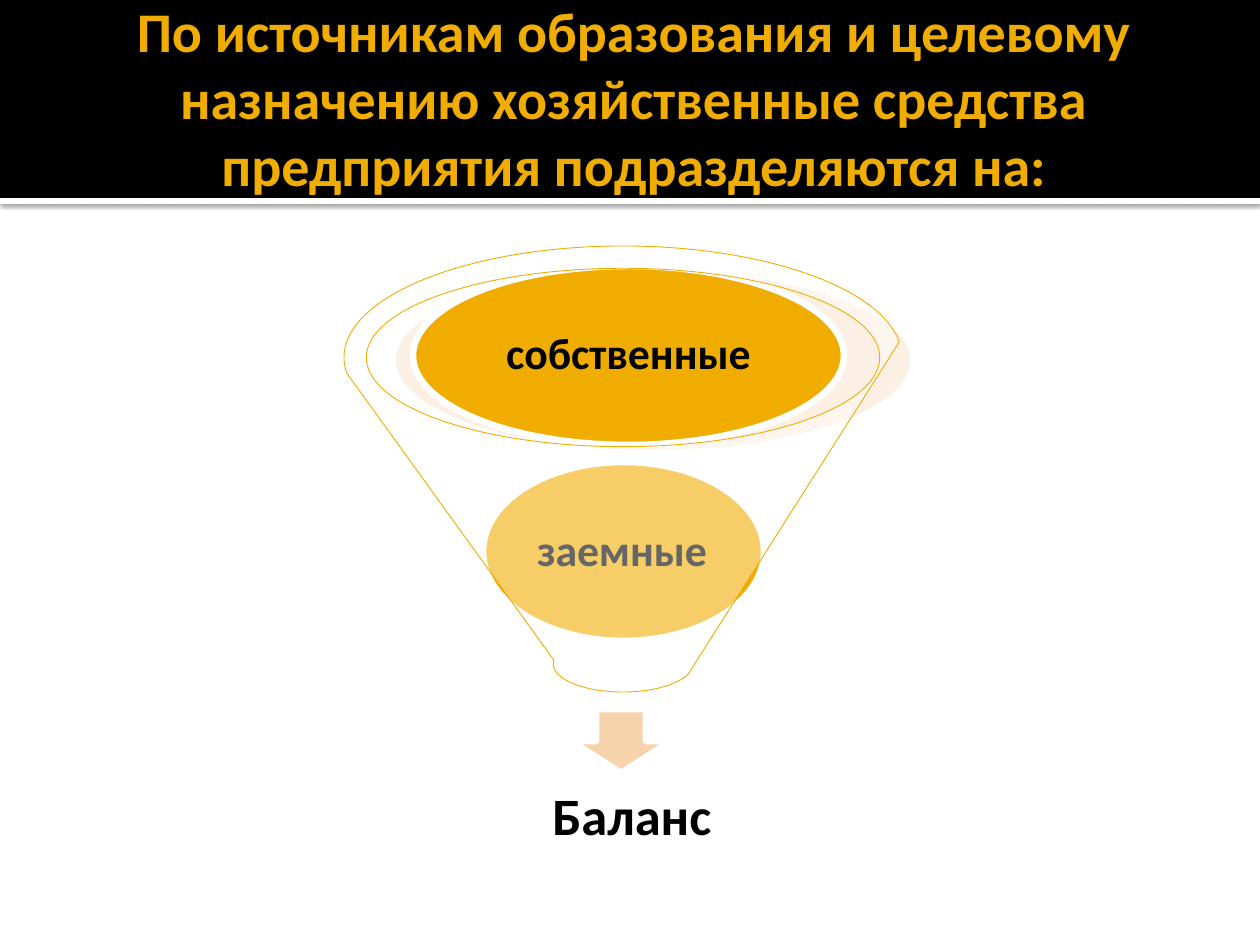
import dataclasses

import pptx
import pptx.dml.color
import pptx.enum.shapes
import pptx.enum.text
import pptx.oxml
import pptx.oxml.ns
import pptx.util

SHAPE = pptx.enum.shapes.MSO_SHAPE
PX_PER_INCH = 126


@dataclasses.dataclass(frozen=True)
class Theme:
    font: str = "Calibri"
    gold: str = "F0AD00"
    black: str = "000000"
    white: str = "FFFFFF"
    rim: str = "F8DBBD"
    arrow: str = "F6D3AB"
    title_size: int = 32
    result_size: int = 30
    ball_size: int = 25
    outline: float = 3.78
    hairline: float = 0.5


def px(length):
    return pptx.util.Emu(round(length * 914400 / PX_PER_INCH))


def rgb(color):
    return pptx.dml.color.RGBColor.from_string(color)


def apply(target, values):
    for name, value in values.items():
        setattr(target, name, value)


def place(box, left, top, width, height):
    apply(box, {"left": px(left), "top": px(top), "width": px(width), "height": px(height)})


def effect(tag, **attributes):
    element = pptx.oxml.parse_xml(f"<a:{tag} {pptx.oxml.ns.nsdecls('a')}/>")
    for name, value in attributes.items():
        element.set(name, str(value))
    return element


class SlideBuilder:
    def __init__(self, page, theme):
        self.page = page
        self.theme = theme

    def shape(self, kind, area, fill, line=None, line_width=0, opacity=100):
        box = self.page.shapes.add_shape(kind, *map(px, area))
        box.shadow.inherit = False
        box.fill.solid()
        box.fill.fore_color.rgb = rgb(fill)
        if opacity < 100:
            color = box.element.find(".//" + pptx.oxml.ns.qn("a:srgbClr"))
            color.append(effect("alpha", val=opacity * 1000))
        if line:
            box.line.color.rgb = rgb(line)
            box.line.width = pptx.util.Pt(line_width)
        else:
            box.line.fill.background()
        return box

    def shadow(self, box, color, opacity, blur, distance):
        outer = effect("outerShdw", blurRad=pptx.util.Pt(blur), dist=pptx.util.Pt(distance),
                       dir=90 * 60000, algn="t", rotWithShape=0)
        shade = effect("srgbClr", val=color)
        shade.append(effect("alpha", val=opacity * 1000))
        outer.append(shade)
        box.element.find(".//" + pptx.oxml.ns.qn("a:effectLst")).append(outer)

    def set_words(self, box, words, size, color, insets, spacing=1.0):
        frame = box.text_frame
        sides = ("margin_left", "margin_top", "margin_right", "margin_bottom")
        apply(frame, dict(zip(sides, map(px, insets))))
        apply(frame, {
            "word_wrap": True,
            "auto_size": pptx.enum.text.MSO_AUTO_SIZE.NONE,
            "vertical_anchor": pptx.enum.text.MSO_ANCHOR.MIDDLE,
        })
        para = frame.paragraphs[0]
        apply(para, {"alignment": pptx.enum.text.PP_ALIGN.CENTER, "line_spacing": spacing})
        span = para.add_run()
        span.text = words
        apply(span.font, {"name": self.theme.font, "size": pptx.util.Pt(size), "bold": True})
        span.font.color.rgb = rgb(color)

    def title(self, area, words):
        box = self.page.shapes.title
        place(box, *area)
        box.element.getparent().append(box.element)
        self.set_words(box, words, self.theme.title_size, self.theme.gold, (13, 6, 6, 6))

    def label(self, area, words, size, inset):
        box = self.page.shapes.add_textbox(*map(px, area))
        self.set_words(box, words, size, self.theme.black, (inset,) * 4, 0.9)

    def ball(self, area, label_area, words):
        theme = self.theme
        self.shape(SHAPE.OVAL, area, theme.gold, theme.white, theme.outline)
        self.label(label_area, words, theme.ball_size, 4)


def main():
    theme = Theme()
    deck = pptx.Presentation()
    apply(deck, {"slide_width": px(1260), "slide_height": px(945)})
    page = deck.slides.add_slide(deck.slide_layouts[5])
    builder = SlideBuilder(page, theme)

    stripe = builder.shape(SHAPE.RECTANGLE, (0, 198, 1260, 6), theme.white)
    builder.shadow(stripe, theme.black, 60, 2.5, 0.8)
    builder.shape(SHAPE.RECTANGLE, (0, 0, 1260, 198), theme.black)
    builder.title((20, 0, 1221, 194),
                  "По источникам образования и целевому назначению "
                  "хозяйственные средства предприятия подразделяются на:")

    builder.shape(SHAPE.OVAL, (396, 271, 514, 179), theme.rim, opacity=40)
    builder.shape(SHAPE.DOWN_ARROW, (571, 709, 100, 64), theme.arrow, theme.white, theme.outline)
    builder.label((393, 759, 478, 120), "Баланс", theme.result_size, 29)
    builder.ball((483, 462, 281, 179), (523, 489, 198, 127), "заемные")
    builder.ball((413, 266, 431, 179), (476, 292, 305, 127), "собственные")
    builder.shape(SHAPE.FUNNEL, (344, 246, 558, 446), theme.white,
                  theme.gold, theme.hairline, opacity=40)

    deck.save("out.pptx")


if __name__ == "__main__":
    main()
